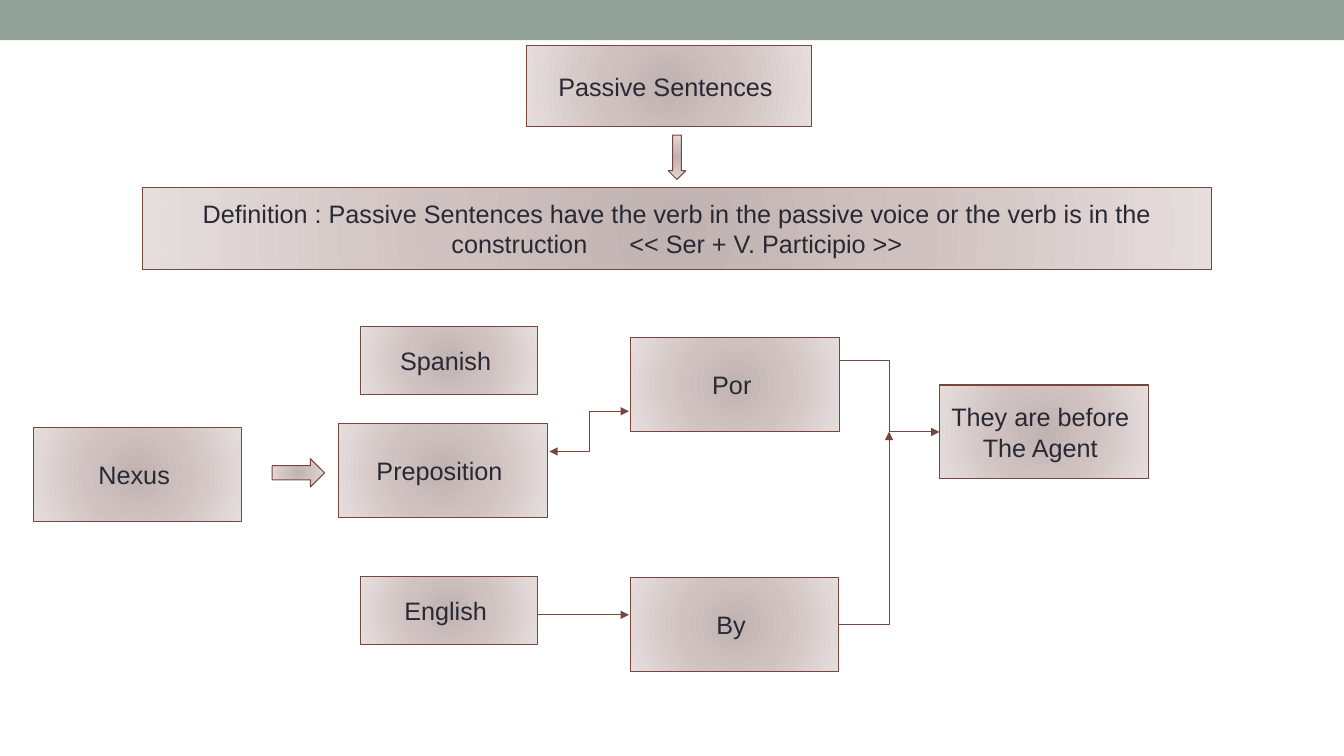
from lxml import etree
from pptx import Presentation
from pptx.dml.color import RGBColor
from pptx.enum.shapes import MSO_CONNECTOR, MSO_SHAPE
from pptx.enum.text import MSO_ANCHOR, PP_ALIGN
from pptx.oxml import parse_xml
from pptx.oxml.ns import nsdecls, qn
from pptx.util import Inches, Pt

RECTANGLE, DOWN, RIGHT = MSO_SHAPE.RECTANGLE, MSO_SHAPE.DOWN_ARROW, MSO_SHAPE.RIGHT_ARROW
STRAIGHT, ELBOW = MSO_CONNECTOR.STRAIGHT, MSO_CONNECTOR.ELBOW
MIDDLE, CENTER = MSO_ANCHOR.MIDDLE, PP_ALIGN.CENTER

SAGE = RGBColor(0x93, 0xA2, 0x99)
BROWN = RGBColor(0x79, 0x46, 0x3D)
INK = RGBColor(0x29, 0x29, 0x34)
GRADIENT = (
    (0, RGBColor(0xC0, 0xB3, 0xB1)),
    (45, RGBColor(0xD0, 0xC2, 0xC0)),
    (100, RGBColor(0xE5, 0xDE, 0xDD)),
)
FONT = {"name": "Arial", "size": Pt(18)}
GRID = 100  # columns and rows across the slide

# Box sizes in columns and rows
LARGE = (15.53, 12.4)
SMALL = (13.13, 8.93)
TITLE = (21.23, 10.8)
WIDE = (79.58, 10.8)

# Left, top, size, paragraphs; a paragraph is a list of parts set apart by a wide gap
BOXES = (
    (39.16, 6, TITLE, [["Passive Sentences "]]),
    (10.58, 24.8, WIDE, [[
        "Definition : Passive Sentences have the verb in the passive voice "
        "or the verb is in the construction",
        "<< Ser + V. Participio >>",
    ]]),
    (2.48, 56.53, LARGE, [["Nexus "]]),
    (69.9, 50.93, LARGE, [["They are before "], ["The Agent "]]),
    (25.2, 56, LARGE, [["Preposition "]]),
    (46.95, 44.67, LARGE, [["Por "]]),
    (26.85, 43.2, SMALL, [["Spanish "]]),
    (26.85, 76.27, SMALL, [["English "]]),
    (46.9, 76.4, LARGE, [["By "]]),
)
BLOCK_ARROWS = (
    (DOWN, 49.72, 17.87, (1.3, 5.87)),
    (RIGHT, 20.25, 60.67, (3.9, 3.73)),
)
# Kind, start, end, ends with arrowheads, preset
LINKS = (
    (ELBOW, (62.48, 47.73), (69.9, 57.13), ["tailEnd"], "bentConnector3"),
    (ELBOW, (40.88, 59.73), (46.8, 54.4), ["headEnd", "tailEnd"], "bentConnector3"),
    (STRAIGHT, (39.98, 81.33), (46.8, 81.33), ["tailEnd"], "line"),
    (ELBOW, (62.42, 82.6), (66.15, 57.13), ["tailEnd"], "bentConnector2"),
)


class Diagram:
    """Draws on one slide, with lengths given in grid columns and rows."""

    def __init__(self, deck):
        self.slide = deck.slides.add_slide(deck.slide_layouts[6])
        self.column = deck.slide_width / GRID
        self.row = deck.slide_height / GRID

    def place(self, columns, rows):
        return round(columns * self.column), round(rows * self.row)

    def outline(self, item):
        item.line.color.rgb = BROWN
        item.line.width = Pt(0.75)

    def shape(self, kind, left, top, size):
        item = self.slide.shapes.add_shape(kind, *self.place(left, top), *self.place(*size))
        item.shadow.inherit = False
        return item

    def band(self, rows):
        band = self.shape(RECTANGLE, 0, 0, (GRID, rows))
        band.fill.solid()
        band.fill.fore_color.rgb = SAGE
        band.line.fill.background()

    def shaded(self, kind, left, top, size):
        """Adds an outlined shape with the radial gradient."""
        item = self.shape(kind, left, top, size)
        stops = "".join(
            f'<a:gs pos="{share * 1000}"><a:srgbClr val="{color}"/></a:gs>'
            for share, color in GRADIENT
        )
        gradient = parse_xml(
            f'<a:gradFill {nsdecls("a")} rotWithShape="1"><a:gsLst>{stops}</a:gsLst>'
            '<a:path path="circle"><a:fillToRect l="100000" t="100000" r="100000" b="100000"/>'
            "</a:path></a:gradFill>"
        )
        item.element.spPr.find(qn("a:prstGeom")).addnext(gradient)
        self.outline(item)
        return item

    def box(self, left, top, size, paragraphs):
        frame = self.shaded(RECTANGLE, left, top, size).text_frame
        frame.word_wrap = True
        frame.vertical_anchor = MIDDLE
        for number, parts in enumerate(paragraphs):
            paragraph = frame.add_paragraph() if number else frame.paragraphs[0]
            paragraph.alignment = CENTER
            for index, part in enumerate(parts):
                if index:
                    self.run(paragraph, " ").font._element.set("spc", "2500")
                self.run(paragraph, part)

    def run(self, paragraph, text):
        run = paragraph.add_run()
        run.text = text
        for attribute, value in FONT.items():
            setattr(run.font, attribute, value)
        run.font.color.rgb = INK
        return run

    def link(self, kind, start, end, heads, preset):
        link = self.slide.shapes.add_connector(kind, *self.place(*start), *self.place(*end))
        self.outline(link)
        properties = link.element.spPr
        properties.find(qn("a:prstGeom")).set("prst", preset)
        for head in heads:
            etree.SubElement(properties.find(qn("a:ln")), qn(f"a:{head}"), type="triangle")
        etree.SubElement(properties, qn("a:effectLst"))


def main():
    deck = Presentation()
    deck.slide_width, deck.slide_height = Inches(13.33), Inches(7.5)
    diagram = Diagram(deck)
    diagram.band(5.33)
    for box in BOXES:
        diagram.box(*box)
    for arrow in BLOCK_ARROWS:
        diagram.shaded(*arrow)
    for link in LINKS:
        diagram.link(*link)
    deck.save("out.pptx")


if __name__ == "__main__":
    main()
